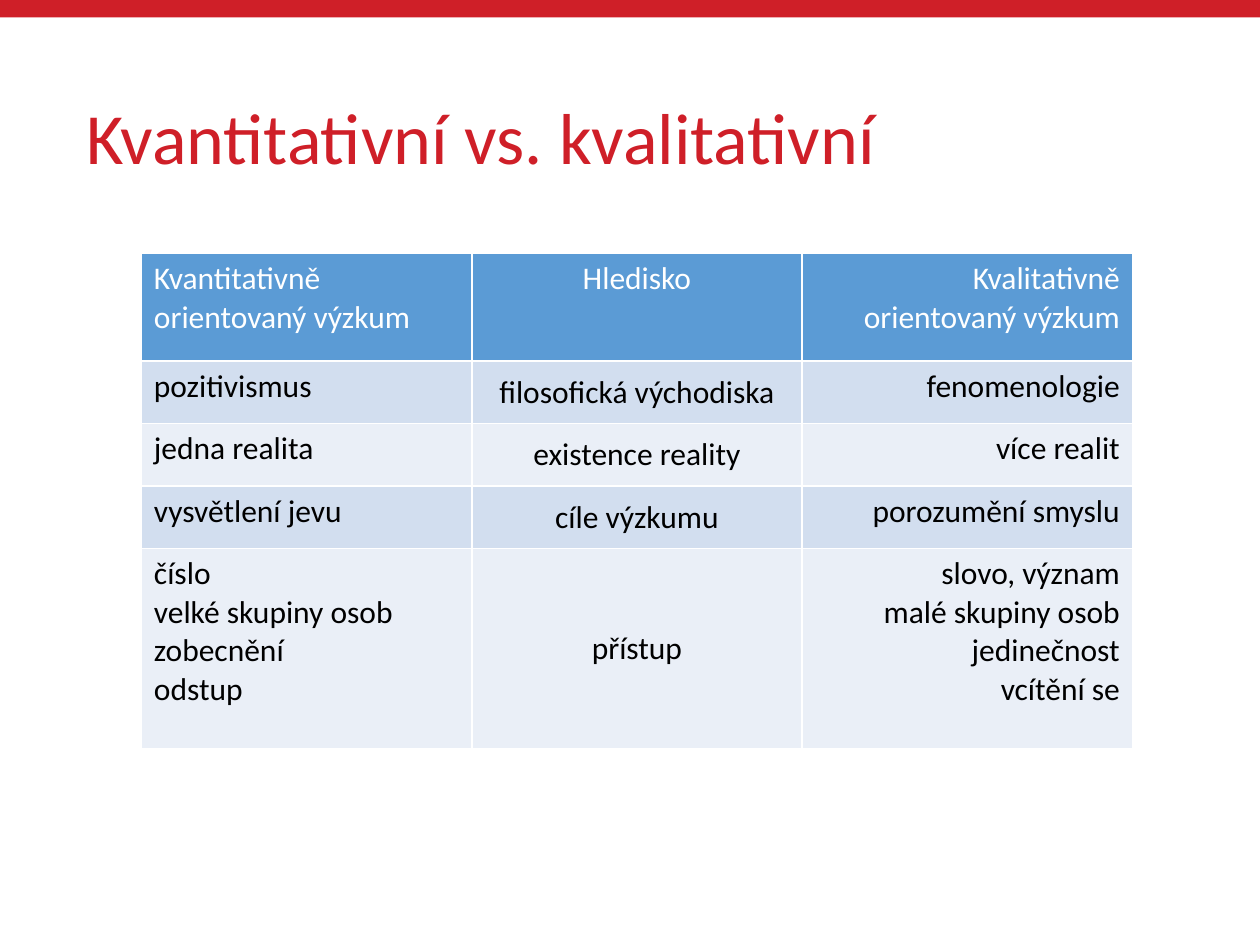
"""Build a slide comparing quantitative and qualitative research in a table."""
from pptx import Presentation
from pptx.dml.color import RGBColor
from pptx.enum.shapes import MSO_SHAPE
from pptx.enum.text import MSO_ANCHOR, PP_ALIGN
from pptx.util import Cm, Pt

RECTANGLE = MSO_SHAPE.RECTANGLE
TOP, MIDDLE = MSO_ANCHOR.TOP, MSO_ANCHOR.MIDDLE
ALIGNMENTS = [PP_ALIGN.LEFT, PP_ALIGN.CENTER, PP_ALIGN.RIGHT]
FONT = "Calibri"
COLOURS = {
    "red": "CF1F28",
    "header": "5B9BD5",
    "odd": "D2DEEF",
    "even": "EAEFF7",
    "white": "FFFFFF",
    "black": "000000",
}
ROWS = [
    ["Kvantitativně orientovaný výzkum", "Hledisko", "Kvalitativně orientovaný výzkum"],
    ["pozitivismus", "filosofická východiska", "fenomenologie"],
    ["jedna realita", "existence reality", "více realit"],
    ["vysvětlení jevu", "cíle výzkumu", "porozumění smyslu"],
    [
        "číslo\nvelké skupiny osob\nzobecnění\nodstup",
        "přístup",
        "slovo, význam\nmalé skupiny osob\njedinečnost\nvcítění se",
    ],
]
ROW_HEIGHTS = [2.17, 1.26, 1.26, 1.26, 4.03]
COLUMN_WIDTH = 6.66


def colour(name):
    return RGBColor.from_string(COLOURS[name])


def style_text(paragraph, size, name):
    for span in paragraph.runs:
        span.font.name = FONT
        span.font.size = Pt(size)
        span.font.bold = False
        span.font.color.rgb = colour(name)


deck = Presentation()
deck.slide_width, deck.slide_height = Cm(25.4), Cm(19.05)
page = deck.slides.add_slide(deck.slide_layouts[6])

stripe = page.shapes.add_shape(RECTANGLE, 0, 0, deck.slide_width, Cm(0.35))
stripe.shadow.inherit = False
stripe.fill.solid()
stripe.fill.fore_color.rgb = colour("red")
stripe.line.fill.background()

title_box = page.shapes.add_textbox(Cm(1.5), Cm(1.01), Cm(22.4), Cm(3.68))
title_frame = title_box.text_frame
title_frame.word_wrap = True
title_frame.vertical_anchor = MIDDLE
title_frame.text = "Kvantitativní vs. kvalitativní"
title_paragraph = title_frame.paragraphs[0]
title_paragraph.line_spacing = 0.9
style_text(title_paragraph, 41.2, "red")

table = page.shapes.add_table(
    len(ROWS), len(ALIGNMENTS), Cm(2.85), Cm(5.11),
    Cm(COLUMN_WIDTH * len(ALIGNMENTS)), Cm(sum(ROW_HEIGHTS)),
).table
for column in table.columns:
    column.width = Cm(COLUMN_WIDTH)

for row_index, (texts, height) in enumerate(zip(ROWS, ROW_HEIGHTS)):
    table.rows[row_index].height = Cm(height)
    is_header = row_index == 0
    band = "header" if is_header else ("even", "odd")[row_index % 2]
    for column_index, (text, alignment) in enumerate(zip(texts, ALIGNMENTS)):
        cell = table.cell(row_index, column_index)
        cell.fill.solid()
        cell.fill.fore_color.rgb = colour(band)
        cell.vertical_anchor = MIDDLE if column_index == 1 and not is_header else TOP
        cell.text_frame.text = text
        for paragraph in cell.text_frame.paragraphs:
            paragraph.alignment = alignment
            style_text(paragraph, 18, "white" if is_header else "black")

deck.save("out.pptx")
